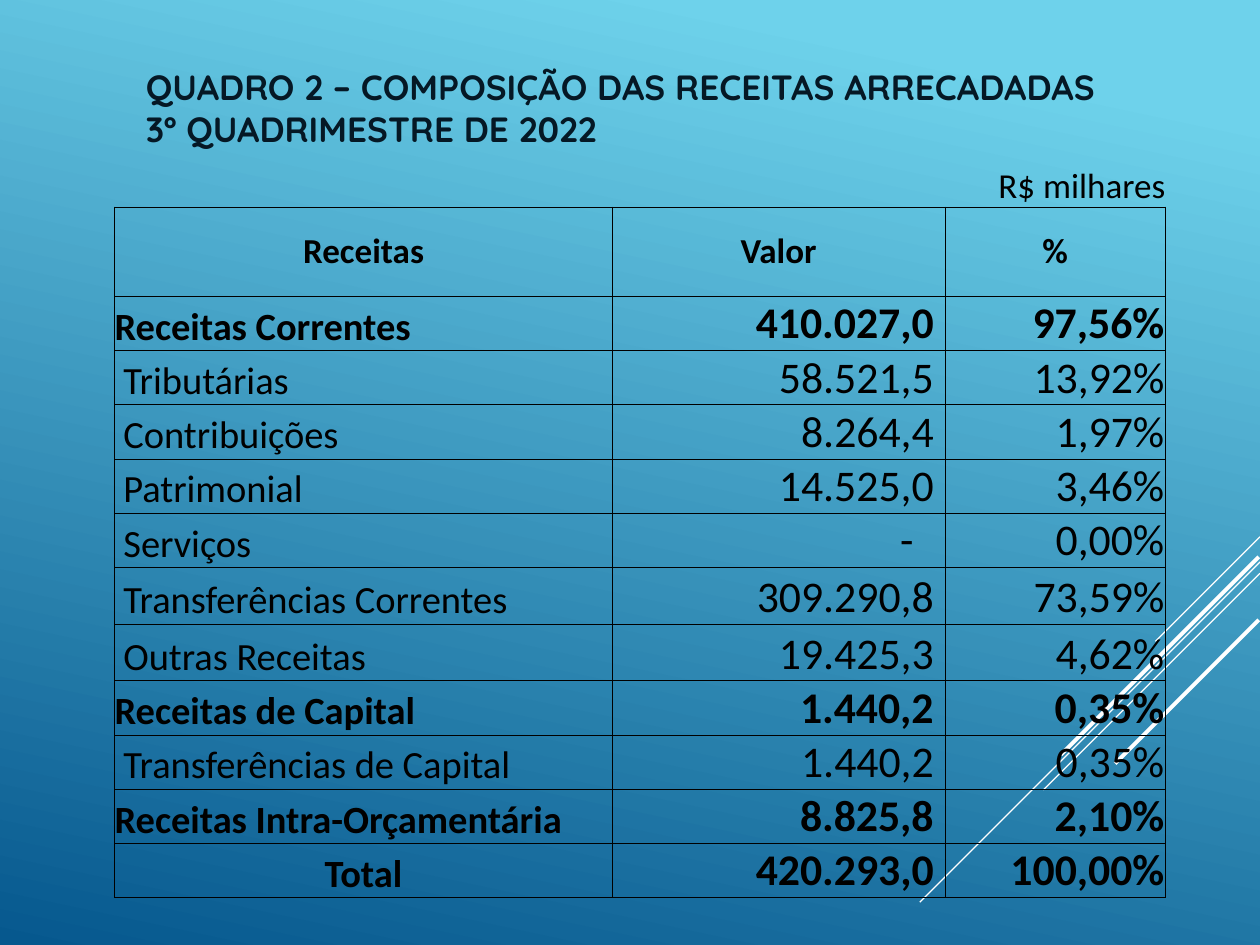
from dataclasses import dataclass
from itertools import product

from lxml.etree import SubElement
from pptx import Presentation
from pptx.dml.color import RGBColor
from pptx.enum.shapes import MSO_CONNECTOR
from pptx.enum.text import MSO_ANCHOR, PP_ALIGN
from pptx.oxml import parse_xml
from pptx.oxml.ns import nsdecls, qn
from pptx.util import Inches, Pt


@dataclass(frozen=True)
class Theme:
    """Colours, fonts and type sizes of the slide."""
    sky: str = "6ED2EB"
    deep: str = "06588E"
    stripe: str = "FFFFFF"
    title: str = "051825"
    ink: str = "000000"
    title_font: str = "Quicksand"
    body_font: str = "Calibri"
    small: int = 20
    label: int = 22
    number: int = 25


THEME = Theme()
COLUMNS = (3.95, 0.9, 1.74, 1.75)
ROW_HEIGHTS = (0.33, 0.71) + (0.43,) * 5 + (0.45,) * 2 + (0.43,) * 4
REVENUES = (
    ("Receitas Correntes", "410.027,0", "97,56%"),
    ("Tributárias", "58.521,5", "13,92%"),
    ("Contribuições", "8.264,4", "1,97%"),
    ("Patrimonial", "14.525,0", "3,46%"),
    ("Serviços", "-", "0,00%"),
    ("Transferências Correntes", "309.290,8", "73,59%"),
    ("Outras Receitas", "19.425,3", "4,62%"),
    ("Receitas de Capital", "1.440,2", "0,35%"),
    ("Transferências de Capital", "1.440,2", "0,35%"),
    ("Receitas Intra-Orçamentária", "8.825,8", "2,10%"),
    ("Total", "420.293,0", "100,00%"),
)
GROUPS = {"Receitas Correntes", "Receitas de Capital", "Receitas Intra-Orçamentária", "Total"}
STRIPES = (
    (10, 4.26, 0.83, 0.75),
    (10, 4.46, 2.7, 0.75),
    (10, 4.55, 1.72, 0.75),
    (9.99, 4.42, 1.57, 2.25),
    (9.99, 4.92, 1.14, 2.25),
)


def apply_format(target, values):
    """Set every attribute named in values on target."""
    for name, value in values.items():
        setattr(target, name, value)


def style_text(paragraph, size, color, font, bold=False, align=PP_ALIGN.LEFT):
    """Format a paragraph and its font."""
    paragraph.alignment = align
    apply_format(paragraph.font, {"size": Pt(size), "bold": bold, "name": font})
    paragraph.font.color.rgb = RGBColor.from_string(color)


def paint_background(slide):
    """Fill the slide with the blue gradient."""
    fill = slide.background.fill
    fill.gradient()
    fill.gradient_angle = 258
    for stop, position, color in zip(fill.gradient_stops, (0.1, 1), (THEME.sky, THEME.deep)):
        stop.position = position
        stop.color.rgb = RGBColor.from_string(color)


def add_stripes(slide):
    """Draw the 45 degree stripes from the right edge."""
    for right, top, reach, weight in STRIPES:
        stripe = slide.shapes.add_connector(
            MSO_CONNECTOR.STRAIGHT, Inches(right), Inches(top),
            Inches(right - reach), Inches(top + reach))
        stripe.line.width = Pt(weight)
        stripe.line.color.rgb = RGBColor.from_string(THEME.stripe)
        SubElement(stripe._element.spPr, qn("a:effectLst"))


def add_title(slide, left, top, width, height):
    """Place the two-line heading."""
    frame = slide.shapes.add_textbox(*map(Inches, (left, top, width, height))).text_frame
    apply_format(frame, {"word_wrap": True, "vertical_anchor": MSO_ANCHOR.MIDDLE})
    heading = frame.paragraphs[0]
    heading.text = "QUADRO 2 – COMPOSIÇÃO DAS RECEITAS ARRECADADAS\v3º QUADRIMESTRE DE 2022"
    style_text(heading, THEME.small, THEME.title, THEME.title_font, bold=True)


def draw_borders(cell, visible):
    """Rule the visible sides of a cell and clear the others."""
    properties = cell._tc.get_or_add_tcPr()
    for index, side in enumerate("LRTB"):
        paint = (f'<a:solidFill><a:srgbClr val="{THEME.ink}"/></a:solidFill>'
                 if side in visible else "<a:noFill/>")
        properties.insert(index, parse_xml(
            f'<a:ln{side} {nsdecls("a")} w="{Pt(0.5)}">{paint}</a:ln{side}>'))


def write_cell(cell, text, size, bold=False, align=PP_ALIGN.RIGHT,
               anchor=MSO_ANCHOR.BOTTOM, left=0, right=0):
    """Write one formatted table cell."""
    apply_format(cell, {"vertical_anchor": anchor, "margin_left": Inches(left),
                        "margin_right": Inches(right)})
    paragraph = cell.text_frame.paragraphs[0]
    paragraph.text = text
    style_text(paragraph, size, THEME.ink, THEME.body_font, bold, align)


def add_revenue_table(slide, left, top, width, height):
    """Build the revenue table with its unit line, header and rows."""
    table = slide.shapes.add_table(
        len(ROW_HEIGHTS), len(COLUMNS), *map(Inches, (left, top, width, height))).table
    apply_format(table, {"first_row": False, "horz_banding": False})
    for column, size in zip(table.columns, COLUMNS):
        column.width = Inches(size)
    for row, size in zip(table.rows, ROW_HEIGHTS):
        row.height = Inches(size)
    for row, column in product(range(len(ROW_HEIGHTS)), range(len(COLUMNS))):
        cell = table.cell(row, column)
        apply_format(cell, dict.fromkeys(
            ("margin_left", "margin_right", "margin_top", "margin_bottom"), 0))
        cell.fill.background()
        draw_borders(cell, "LRTB" if row else "B")
    for row in range(1, len(ROW_HEIGHTS)):
        table.cell(row, 1).merge(table.cell(row, 2))

    write_cell(table.cell(0, 3), "R$ milhares", THEME.small)
    for column, header in zip((0, 1, 3), ("Receitas", "Valor", "%")):
        write_cell(table.cell(1, column), header, THEME.small, True,
                   PP_ALIGN.CENTER, MSO_ANCHOR.MIDDLE)
    for row, (label, value, share) in enumerate(REVENUES, start=2):
        bold = label in GROUPS
        write_cell(table.cell(row, 0), label, THEME.label, bold,
                   PP_ALIGN.CENTER if label == "Total" else PP_ALIGN.LEFT,
                   left=0 if bold else 0.07)
        write_cell(table.cell(row, 1), value, THEME.number, bold,
                   right=0.25 if value == "-" else 0.09)
        write_cell(table.cell(row, 3), share, THEME.number, bold, right=0.01)


def main():
    """Create the slide and save it."""
    deck = Presentation()
    apply_format(deck, {"slide_width": Inches(10), "slide_height": Inches(7.5)})
    slide = deck.slides.add_slide(deck.slide_layouts[6])
    paint_background(slide)
    add_stripes(slide)
    add_title(slide, 1.06, 0.6, 8.98, 0.5)
    add_revenue_table(slide, 0.91, 1.31, sum(COLUMNS), sum(ROW_HEIGHTS))
    deck.save("out.pptx")


if __name__ == "__main__":
    main()
